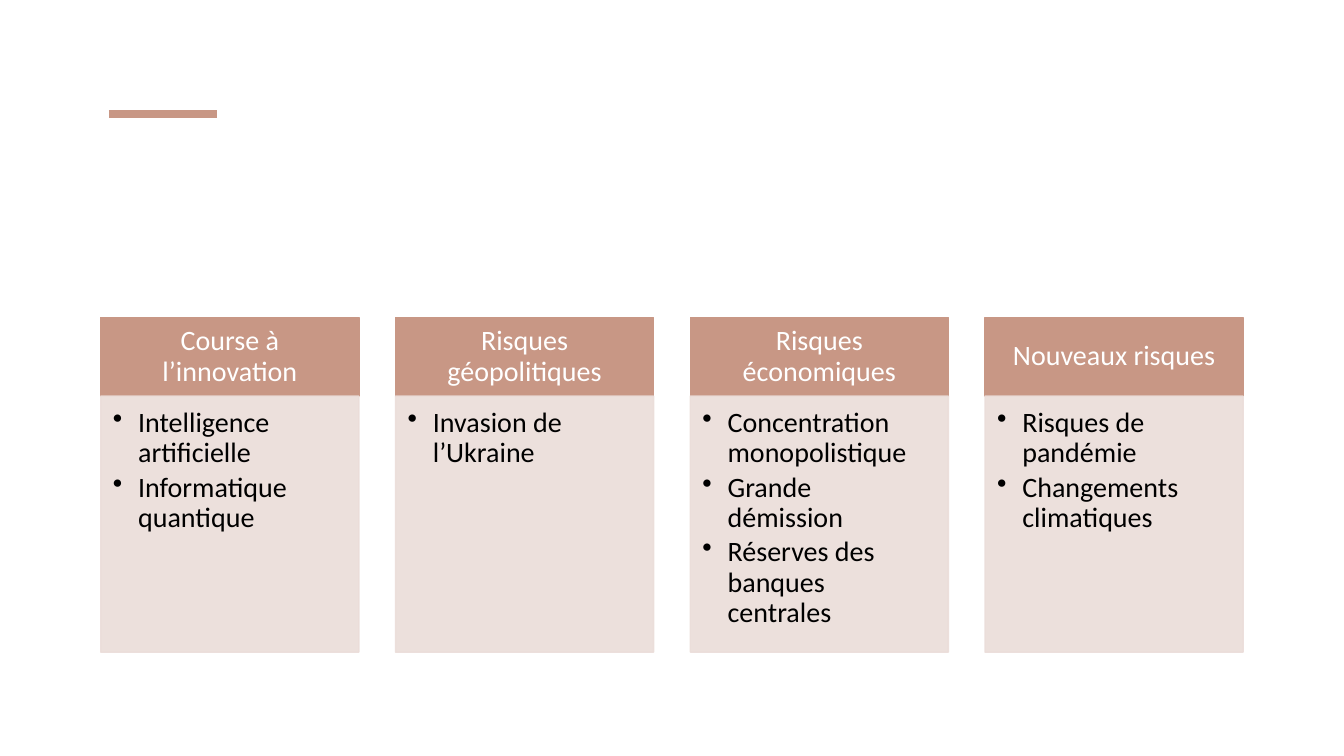
from dataclasses import dataclass

from pptx import Presentation
from pptx.dml.color import RGBColor as Rgb
from pptx.enum.shapes import MSO_CONNECTOR as Connector, MSO_SHAPE as Shape
from pptx.enum.text import MSO_ANCHOR as Anchor, PP_ALIGN as Align
from pptx.oxml.ns import qn
from pptx.oxml.xmlchemy import OxmlElement
from pptx.util import Inches, Pt


@dataclass(frozen=True)
class Theme:
    """Colours and type of the slide."""
    accent: Rgb = Rgb(0xC8, 0x97, 0x85)
    panel: Rgb = Rgb(0xEB, 0xDD, 0xD9)
    heading: Rgb = Rgb(0xFF, 0xFF, 0xFF)
    body: Rgb = Rgb(0x00, 0x00, 0x00)
    font: str = "Calibri"
    size: int = 20


RISKS = {
    "Course à l’innovation": ["Intelligence artificielle", "Informatique quantique"],
    "Risques géopolitiques": ["Invasion de l’Ukraine"],
    "Risques économiques": [
        "Concentration monopolistique",
        "Grande démission",
        "Réserves des banques centrales",
    ],
    "Nouveaux risques": ["Risques de pandémie", "Changements climatiques"],
}
LEFT, RIGHT, TOP = 1, 12.33, 3.15
COLUMN_WIDTH, HEADING_HEIGHT, PANEL_HEIGHT = 2.56, 0.78, 2.54


def write(frame, lines, *, theme, color, insets, anchor=Anchor.TOP,
          align=Align.LEFT, space_after=0, bullet=None):
    """Fill a text frame with one formatted paragraph per line."""
    frame.word_wrap = True
    frame.vertical_anchor = anchor
    (frame.margin_left, frame.margin_top,
     frame.margin_right, frame.margin_bottom) = map(Inches, insets)
    for index, line in enumerate(lines):
        paragraph = frame.add_paragraph() if index else frame.paragraphs[0]
        paragraph.alignment = align
        paragraph.line_spacing = 0.9
        paragraph.space_after = Pt(space_after)
        run = paragraph.add_run()
        run.text = line
        run.font.name = theme.font
        run.font.size = Pt(theme.size)
        run.font.color.rgb = color
        if bullet:
            paragraph.level = 1
            properties = paragraph._p.get_or_add_pPr()
            properties.set("marL", str(Inches(0.25)))
            properties.set("indent", str(Inches(-0.25)))
            mark = OxmlElement("a:buChar")
            mark.set("char", bullet)
            properties.append(mark)


class RiskSlide:
    """Draws styled elements on the current slide."""

    def __init__(self, slide, theme):
        self.slide = slide
        self.theme = theme

    def rule(self, left, top, right, weight):
        """Draw a horizontal accent rule."""
        rule = self.slide.shapes.add_connector(
            Connector.STRAIGHT, Inches(left), Inches(top), Inches(right), Inches(top))
        rule.line.color.rgb = self.theme.accent
        rule.line.width = Pt(weight)
        rule._element.spPr.append(OxmlElement("a:effectLst"))

    def box(self, left, top, height, color, opacity=100):
        """Draw a column-wide rectangle and return it."""
        box = self.slide.shapes.add_shape(
            Shape.RECTANGLE, Inches(left), Inches(top), Inches(COLUMN_WIDTH), Inches(height))
        box.shadow.inherit = False
        box.fill.solid()
        box.fill.fore_color.rgb = color
        box.line.color.rgb = color
        box.line.width = Pt(1)
        if opacity < 100:
            for tint in box._element.spPr.iter(qn("a:srgbClr")):
                alpha = OxmlElement("a:alpha")
                alpha.set("val", str(opacity * 1000))
                tint.append(alpha)
        return box

    def column(self, left, heading, risks):
        """Draw a heading above its bulleted panel."""
        theme = self.theme
        header = self.box(left, TOP, HEADING_HEIGHT, theme.accent)
        write(header.text_frame, [heading], theme=theme, color=theme.heading,
              insets=(0.16, 0.09, 0.16, 0.09), anchor=Anchor.MIDDLE,
              align=Align.CENTER, space_after=7)
        panel = self.box(left, TOP + HEADING_HEIGHT, PANEL_HEIGHT, theme.panel, opacity=90)
        write(panel.text_frame, risks, theme=theme, color=theme.body,
              insets=(0.12, 0.12, 0.16, 0.17), space_after=3, bullet="•")


def main():
    """Build and save the slide."""
    deck = Presentation()
    deck.slide_width, deck.slide_height = Inches(13.33), Inches(7.5)
    blank = deck.slide_layouts[6]
    page = RiskSlide(deck.slides.add_slide(blank), Theme())
    page.rule(1.08, 1.13, 2.15, weight=6)
    pitch = (RIGHT - LEFT - COLUMN_WIDTH) / (len(RISKS) - 1)
    for index, (heading, risks) in enumerate(RISKS.items()):
        page.column(LEFT + index * pitch, heading, risks)
    deck.save("out.pptx")


if __name__ == "__main__":
    main()
